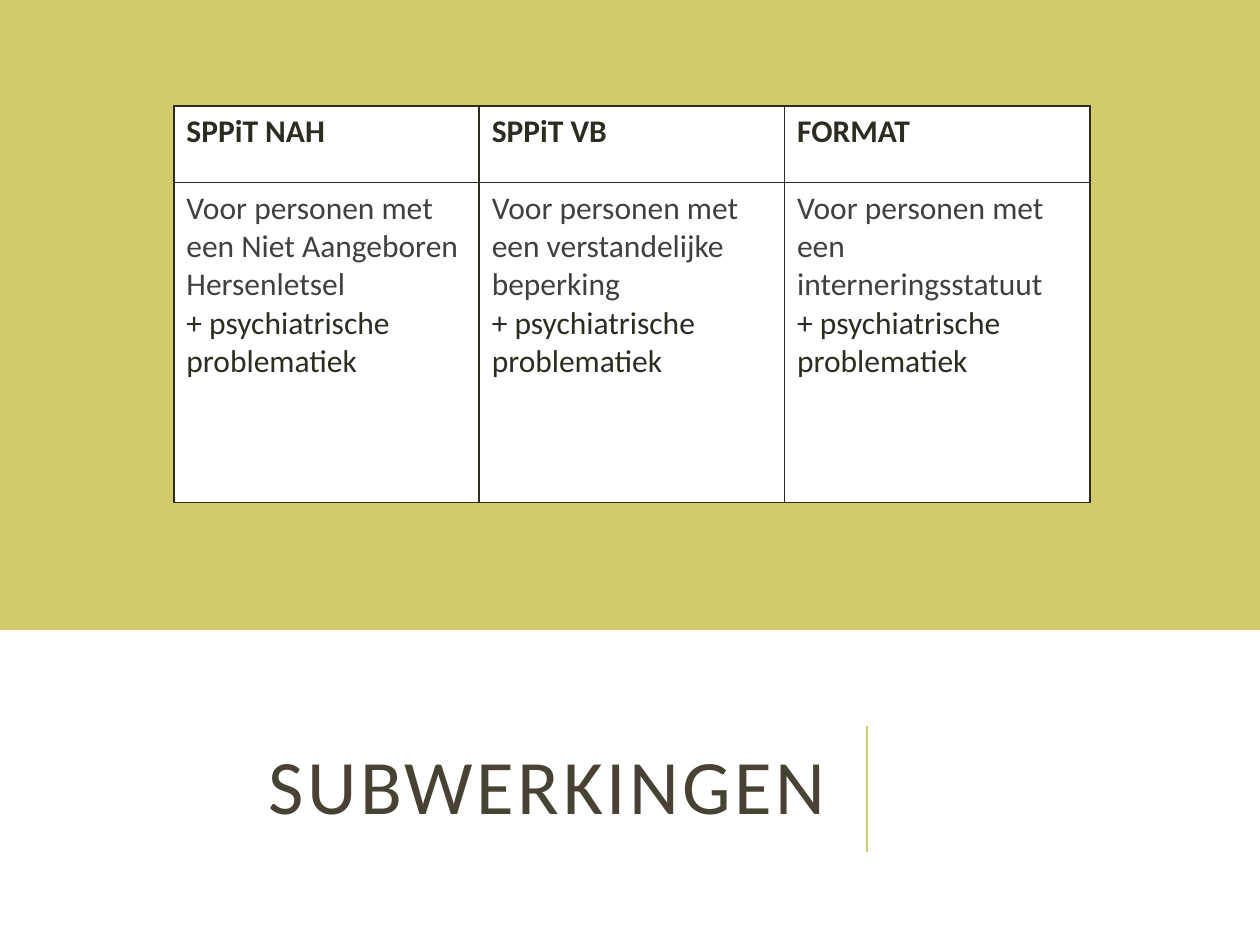
"""Build the slide with a table of three care teams above its title."""
from dataclasses import dataclass

from lxml import etree
from pptx import Presentation
from pptx.dml.color import RGBColor
from pptx.enum.shapes import MSO_CONNECTOR, MSO_SHAPE
from pptx.enum.text import MSO_ANCHOR, MSO_AUTO_SIZE, PP_ALIGN
from pptx.oxml.ns import qn
from pptx.util import Inches, Pt

RECT = MSO_SHAPE.RECTANGLE
LINE = MSO_CONNECTOR.STRAIGHT
MIDDLE = MSO_ANCHOR.MIDDLE
RIGHT = PP_ALIGN.RIGHT
NO_FIT = MSO_AUTO_SIZE.NONE

COLORS = {"lime": "D2CB6C", "ink": "2E2B21", "gray": "404040",
          "title": "474233", "white": "FFFFFF"}
HEAD = {"size": Pt(18), "name": "Calibri", "bold": True}
BODY = {**HEAD, "bold": False}
TITLE = {**BODY, "size": Pt(44)}
EXTRA = "+ psychiatrische problematiek"


@dataclass
class Team:
    name: str
    target: str


TEAMS = [
    Team("SPPiT NAH", "een Niet Aangeboren Hersenletsel"),
    Team("SPPiT VB", "een verstandelijke beperking"),
    Team("FORMAT", "een interneringsstatuut"),
]


def color(key: str) -> RGBColor:
    return RGBColor.from_string(COLORS[key])


def write(para, text: str, style: dict, key: str):
    run = para.add_run()
    run.text = text
    for name, value in style.items():
        setattr(run.font, name, value)
    run.font.color.rgb = color(key)
    return run


def border(cell) -> None:
    props = cell._tc.get_or_add_tcPr()
    for side in ("lnL", "lnR", "lnT", "lnB"):
        line = etree.SubElement(props, qn(f"a:{side}"), w=str(Pt(1)))
        fill = etree.SubElement(line, qn("a:solidFill"))
        etree.SubElement(fill, qn("a:srgbClr"), val=COLORS["ink"])


def add_band(slide) -> None:
    band = slide.shapes.add_shape(RECT, 0, 0, Inches(10), Inches(5))
    band.shadow.inherit = False
    band.fill.solid()
    band.fill.fore_color.rgb = color("lime")
    band.line.fill.background()


def add_rule(slide) -> None:
    x = Inches(6.88)
    rule = slide.shapes.add_connector(LINE, x, Inches(6.76), x, Inches(5.76))
    rule.line.color.rgb = color("lime")
    rule.line.width = Pt(1.5)
    etree.SubElement(rule._element.spPr, qn("a:effectLst"))


def set_title(slide, text: str) -> None:
    title = slide.shapes.title
    place = {"left": -0.35, "top": 5.48, "width": 7.01, "height": 1.62}
    for name, value in place.items():
        setattr(title, name, Inches(value))
    frame = title.text_frame
    form = {"word_wrap": True, "auto_size": NO_FIT, "vertical_anchor": MIDDLE}
    for name, value in form.items():
        setattr(frame, name, value)
    para = frame.paragraphs[0]
    para.alignment = RIGHT
    para.line_spacing = 0.8
    run = write(para, text, TITLE, "title")
    run.font._element.set("spc", "200")


def add_teams(slide, teams: list[Team]) -> None:
    table = slide.shapes.add_table(
        2, len(teams), Inches(1.38), Inches(0.84), Inches(7.27), Inches(3.15)
    ).table
    for row, height in zip(table.rows, (0.61, 2.54)):
        row.height = Inches(height)
    for col, team in enumerate(teams):
        head, body = table.cell(0, col), table.cell(1, col)
        for cell in (head, body):
            border(cell)
            cell.fill.solid()
            cell.fill.fore_color.rgb = color("white")
        write(head.text_frame.paragraphs[0], team.name, HEAD, "ink")
        frame = body.text_frame
        write(frame.paragraphs[0], f"Voor personen met {team.target}", BODY, "gray")
        write(frame.add_paragraph(), EXTRA, BODY, "ink")


def main() -> None:
    deck = Presentation()
    deck.slide_width, deck.slide_height = Inches(10), Inches(7.5)
    slide = deck.slides.add_slide(deck.slide_layouts[5])
    slide.background.fill.solid()
    slide.background.fill.fore_color.rgb = color("white")
    add_band(slide)
    add_rule(slide)
    set_title(slide, "SUBWERKINGEN")
    add_teams(slide, TEAMS)
    deck.save("out.pptx")


if __name__ == "__main__":
    main()
